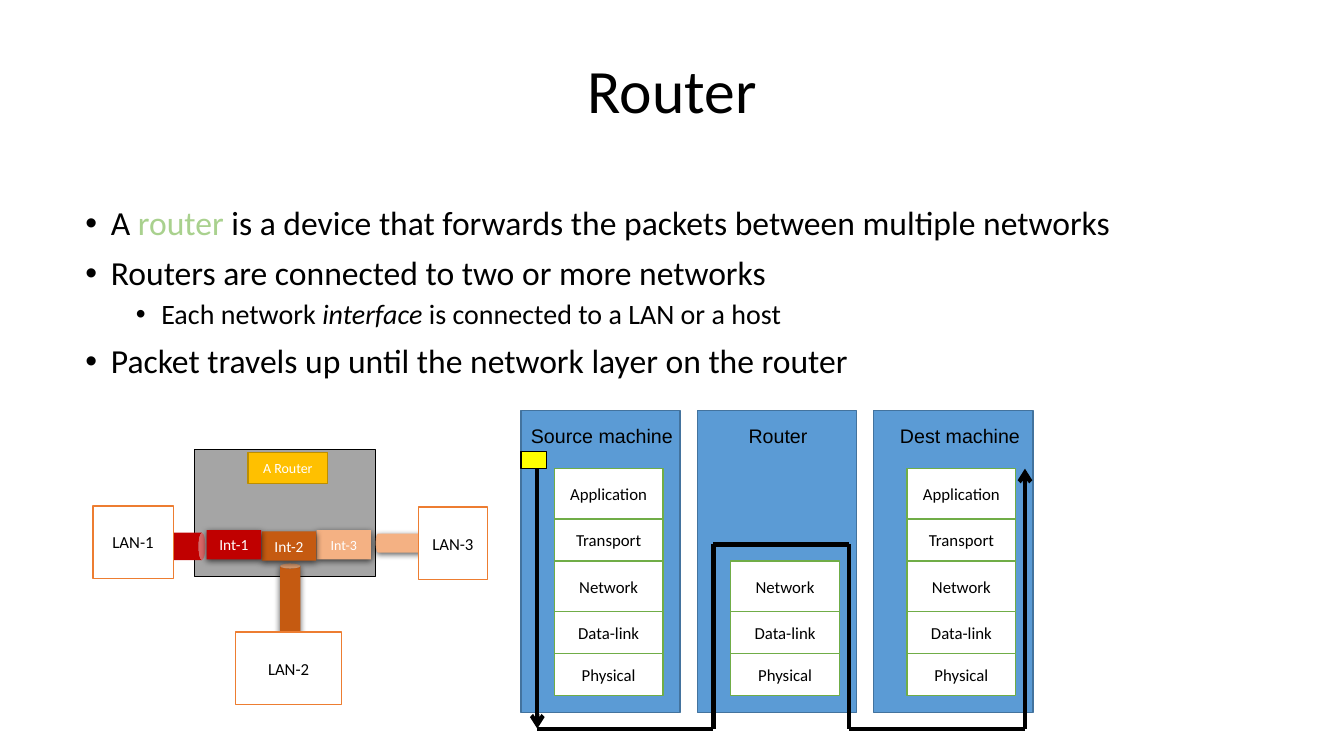
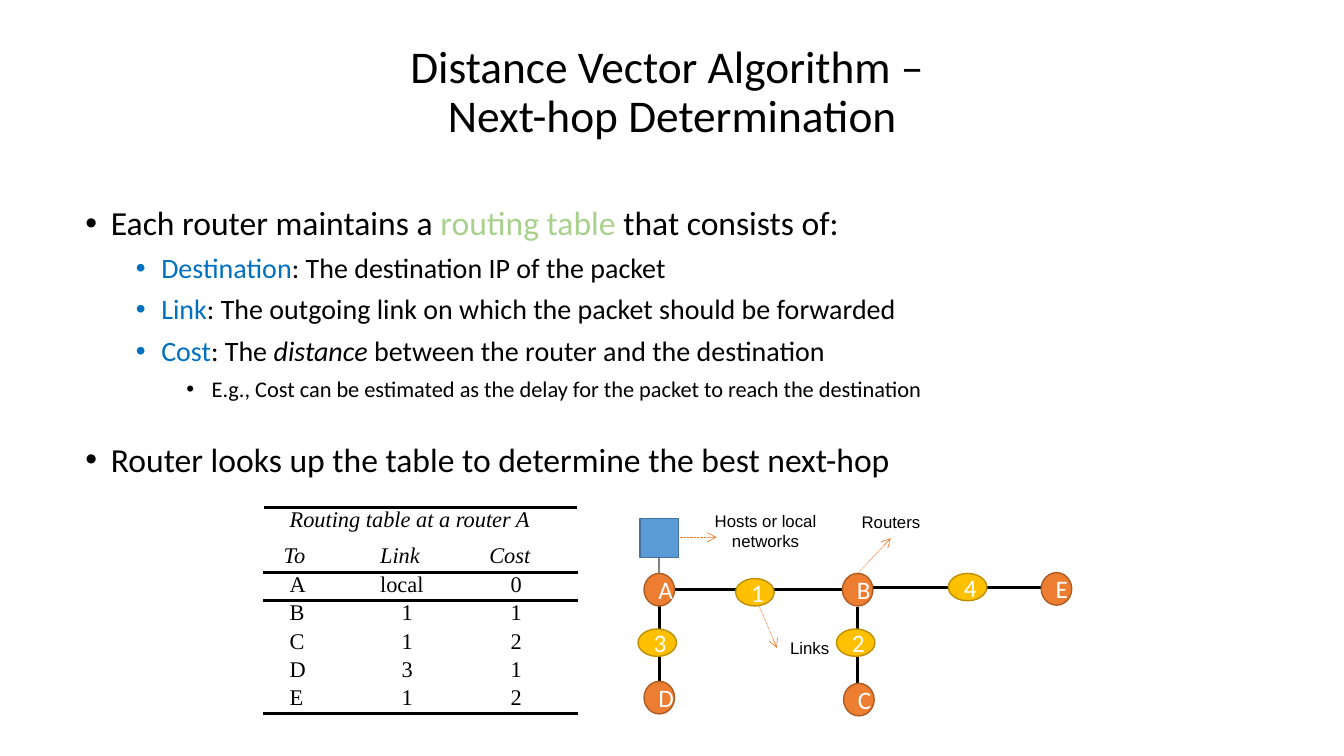
from itertools import pairwise

from lxml.etree import SubElement
from pptx import Presentation
from pptx.dml.color import RGBColor
from pptx.enum.dml import MSO_LINE
from pptx.enum.shapes import MSO_CONNECTOR, MSO_SHAPE
from pptx.enum.text import MSO_ANCHOR, MSO_AUTO_SIZE, PP_ALIGN
from pptx.oxml import parse_xml
from pptx.oxml.ns import nsdecls, qn
from pptx.util import Cm, Pt

COLORS = {
    "black": "000000", "white": "FFFFFF", "gray": "A5A5A5", "midgray": "808080",
    "blue": "5B9BD5", "blue_edge": "43739E", "link": "0070C0",
    "green": "70AD47", "pale_green": "A9D18E", "yellow": "FFFF00",
    "gold": "FFC000", "gold_edge": "BD8E00", "orange": "ED7D31",
    "orange_edge": "AF5C24", "rust": "C55A11", "red": "C00000", "peach": "F4B183",
}
RGB = {name: RGBColor.from_string(value) for name, value in COLORS.items()}
LEVEL_SIZES = [24, 20, 16]


def write(p, text, size=12, color="black", font="Calibri", italic=False, align=None):
    r = p.add_run()
    r.text = text
    r.font.size, r.font.name, r.font.italic = Pt(size), font, italic
    r.font.color.rgb = RGB[color]
    if align is not None:
        p.alignment = align


def add_box(s, kind, x, y, w, h, fill=None, line=None, text="", shadow=False,
            align=PP_ALIGN.CENTER, **fmt):
    """Add a preset shape, or a text box when kind is None."""
    pos = Cm(x), Cm(y), Cm(w), Cm(h)
    if kind is None:
        sp = s.shapes.add_textbox(*pos)
    else:
        sp = s.shapes.add_shape(kind, *pos)
        sp.shadow.inherit = False
        sp.fill.solid()
        sp.fill.fore_color.rgb = RGB[fill]
        if line:
            sp.line.color.rgb = RGB[line]
            sp.line.width = Pt(1)
        else:
            sp.line.fill.background()
        sp.text_frame.vertical_anchor = MSO_ANCHOR.MIDDLE
    if shadow:
        effects = sp._element.spPr.find(qn("a:effectLst"))
        effects.append(parse_xml(
            f'<a:outerShdw {nsdecls("a")} blurRad="57150" dist="19050" dir="5400000" '
            f'algn="ctr" rotWithShape="0"><a:srgbClr val="{COLORS["black"]}">'
            '<a:alpha val="63000"/></a:srgbClr></a:outerShdw>'))
    sp.text_frame.word_wrap = True
    if text:
        write(sp.text_frame.paragraphs[0], text, align=align, **fmt)
    return sp


prs = Presentation()
prs.slide_width, prs.slide_height = Cm(33.87), Cm(19.05)

# Titles and bullets: (level, space before, runs)
CONTENT = [
    ("Router", 44, [
        (0, 0, [("A ", {}), ("router", {"color": "pale_green"}),
                (" is a device that forwards the packets between multiple networks", {})]),
        (0, 10, [("Routers are connected to two or more networks", {})]),
        (1, 5, [("Each network ", {}), ("interface ", {"italic": True}),
                ("is connected to a LAN or a host", {})]),
        (0, 10, [("Packet travels up until the network layer on the router", {})]),
    ]),
    ("Distance Vector Algorithm – \nNext-hop Determination", 32.4, [
        (0, 0, [("Each router maintains a ", {}),
                ("routing table", {"color": "pale_green"}), (" that consists of:", {})]),
        (1, 8, [("Destination", {"color": "link"}),
                (": The destination IP of the packet", {})]),
        (1, 8, [("Link", {"color": "link"}),
                (": The outgoing link on which the packet should be forwarded", {})]),
        (1, 8, [("Cost", {"color": "link"}), (": The ", {}),
                ("distance", {"italic": True}),
                (" between the router and the destination", {})]),
        (2, 8, [("E.g., Cost can be estimated as the delay for the packet "
                 "to reach the destination", {})]),
        (0, 29, [("Router looks up the table to determine the best next-hop", {})]),
    ]),
]
slides = []
for title, title_size, bullets in CONTENT:
    s = prs.slides.add_slide(prs.slide_layouts[1])
    slides.append(s)
    head, body = s.shapes.title, s.placeholders[1]
    head.left, head.top, head.width, head.height = Cm(5.51), Cm(0.89), Cm(22.86), Cm(2.92)
    body.left, body.top, body.width, body.height = Cm(1.9), Cm(5.08), Cm(29.21), Cm(12.09)
    for sp in (head, body):
        sp.text_frame.auto_size = MSO_AUTO_SIZE.NONE
    head.text_frame.vertical_anchor = MSO_ANCHOR.MIDDLE
    p = head.text_frame.paragraphs[0]
    p.line_spacing = 0.9
    for i, part in enumerate(title.split("\n")):
        if i:
            p.add_line_break()
        write(p, part, size=title_size, align=PP_ALIGN.CENTER)

    tf = body.text_frame
    for i, (level, before, runs) in enumerate(bullets):
        p = tf.add_paragraph() if i else tf.paragraphs[0]
        p.level = level
        pPr = p._p.get_or_add_pPr()
        pPr.set("marL", str(Cm(0.64 + 1.27 * level)))
        pPr.set("indent", str(-Cm(0.64)))
        bullet_color = COLORS[runs[0][1].get("color", "black")]
        SubElement(SubElement(pPr, qn("a:buClr")), qn("a:srgbClr")).set("val", bullet_color)
        SubElement(pPr, qn("a:buFont")).set("typeface", "Arial")
        SubElement(pPr, qn("a:buChar")).set("char", "•")
        p.line_spacing = 0.9
        p.space_before = Pt(before)
        for text, fmt in runs:
            write(p, text, size=LEVEL_SIZES[level], **fmt)
router, vector = slides
RECT, OVAL, CAN = MSO_SHAPE.RECTANGLE, MSO_SHAPE.OVAL, MSO_SHAPE.CAN

# Router with its cables, LANs and interfaces
add_box(router, RECT, 4.9, 11.33, 4.57, 3.2, "gray", "black")
for x, y, w, h, color, angle, shadow in [
    (7.06, 14.2, 0.51, 2.62, "rust", 0, True),
    (3.94, 12.88, 0.69, 1.78, "red", 90, False),
    (10.29, 12.62, 0.48, 2.13, "peach", 90, True),
]:
    add_box(router, CAN, x, y, w, h, color, shadow=shadow).rotation = angle
for text, x, y, w in [("LAN-1", 2.34, 12.75, 2.03), ("LAN-2", 5.94, 15.93, 2.67),
                      ("LAN-3", 10.54, 12.78, 1.75)]:
    add_box(router, RECT, x, y, w, 1.83, "white", "orange", text)
for text, x, y, color, size in [("Int-3", 7.98, 13.36, "peach", 10),
                                ("Int-2", 6.6, 13.39, "rust", 11),
                                ("Int-1", 5.21, 13.36, "red", 11)]:
    add_box(router, RECT, x, y, 1.37, 0.74, color, text=text, shadow=True,
            size=size, color="white")
add_box(router, RECT, 6.25, 11.4, 2.01, 0.79, "gold", "gold_edge", "A Router",
        size=10, color="white")

# Protocol stacks of the three machines
LAYERS = [("Application", 1.27), ("Transport", 1.06), ("Network", 1.27),
          ("Data-link", 1.06), ("Physical", 1.06)]
MACHINES = [("Source machine", 0, 4.24, 0), ("Router", 1.04, 2.34, 2),
            ("Dest machine", 0.41, 3.61, 0)]
for i, (name, label_dx, label_w, first_layer) in enumerate(MACHINES):
    x, y = 13.13 + 4.445 * i, 11.81
    add_box(router, RECT, x, 10.34, 4.01, 7.62, "blue", "blue_edge")
    add_box(router, None, x + label_dx, 10.57, label_w, 0.86, text=name,
            align=PP_ALIGN.LEFT, size=14, font="Arial")
    for j, (layer, h) in enumerate(LAYERS):
        if j >= first_layer:
            add_box(router, RECT, x + 0.84, y, 2.74, h, "white", "green", layer)
        y += h
add_box(router, RECT, 13.13, 11.38, 0.64, 0.43, "yellow", "black")

# Lines: slide, ends, colour, width, arrow, dotted
ROUTE = [(13.54, 11.81), (13.54, 18.36), (17.98, 18.36), (17.98, 13.72),
         (21.39, 13.72), (21.39, 18.36), (25.83, 18.36), (25.83, 11.81)]
lines = [(router, *a, *b, "black", 3, i in (0, 6), False)
         for i, (a, b) in enumerate(pairwise(ROUTE))]
lines += [(vector, *ends, "black", 2.25, False, False) for ends in [
    (16.99, 14.86, 21.23, 14.86), (16.61, 17.17, 16.61, 15.27),
    (21.62, 17.22, 21.62, 15.29), (22, 14.81, 26.24, 14.81)]]
lines += [(vector, 16.61, 14.45, 16.61, 14.05, "midgray", 1.5, False, False)]
lines += [(vector, *ends, "orange", 0.5, True, True) for ends in [
    (19.13, 15.27, 19.58, 16.33), (21.62, 14.45, 22.45, 13.56),
    (17.09, 13.54, 18.06, 13.54)]]
for s, x1, y1, x2, y2, color, width, arrow, dotted in lines:
    c = s.shapes.add_connector(MSO_CONNECTOR.STRAIGHT, Cm(x1), Cm(y1), Cm(x2), Cm(y2))
    c.line.color.rgb = RGB[color]
    c.line.width = Pt(width)
    if dotted:
        c.line.dash_style = MSO_LINE.ROUND_DOT
    if arrow:
        SubElement(c.line._get_or_add_ln(), qn("a:tailEnd")).set("type", "arrow")
    SubElement(c._element.spPr, qn("a:effectLst"))

# Network of routers, links and a host
add_box(vector, RECT, 16.13, 13.06, 0.97, 0.99, "blue", "blue_edge")
for text, x, y in [("A", 16.23, 14.45), ("B", 21.23, 14.45), ("C", 21.26, 17.22),
                   ("D", 16.23, 17.17), ("E", 26.24, 14.43)]:
    add_box(vector, OVAL, x, y, 0.77, 0.82, "orange", "orange_edge", text,
            size=18, color="white")
for text, x, y in [("1", 18.54, 14.58), ("2", 21.08, 15.85), ("3", 16.08, 15.85),
                   ("4", 23.9, 14.45)]:
    add_box(vector, OVAL, x, y, 0.97, 0.69, "gold", "gold_edge", text,
            size=18, color="white")
for text, x, y, w, h in [("Links", 19.58, 15.95, 1.65, 0.76),
                         ("Routers", 21.39, 12.78, 2.13, 0.76),
                         ("Hosts or local networks", 17.63, 12.75, 3.33, 1.3)]:
    add_box(vector, None, x, y, w, h, text=text, font="Arial")

# Routing table
ROWS = [("Routing table at a router A", "", ""), ("To", "Link", "Cost"),
        ("A", "local", "0"), ("B", "1", "1"), ("C", "1", "2"),
        ("D", "3", "1"), ("E", "1", "2")]
HEIGHTS = [0.91, 0.74] + [0.71] * 5
RULES = {0: "a:lnT", 1: "a:lnB", 2: "a:lnT", 6: "a:lnB"}
table = vector.shapes.add_table(7, 3, Cm(6.65), Cm(12.78), Cm(7.9), Cm(5.2)).table
table.first_row = table.horz_banding = False
for col, width in zip(table.columns, (2.43, 2.75, 2.72)):
    col.width = Cm(width)
for i, (row, height) in enumerate(zip(ROWS, HEIGHTS)):
    table.rows[i].height = Cm(height)
    for j, text in enumerate(row):
        cell = table.cell(i, j)
        indent = 1.04 if text.isdigit() else 0.5 if i == 1 or j else 0.65
        cell.margin_left = Cm(indent)
        cell.margin_right = cell.margin_top = cell.margin_bottom = 0
        if i in RULES:
            cell._tc.get_or_add_tcPr().insert(0, parse_xml(
                f'<{RULES[i]} {nsdecls("a")} w="28575"><a:solidFill>'
                f'<a:srgbClr val="{COLORS["black"]}"/></a:solidFill></{RULES[i]}>'))
        cell.fill.background()
        if text:
            write(cell.text_frame.paragraphs[0], text, size=16,
                  font="Times New Roman", italic=i < 2)
table.cell(0, 0).merge(table.cell(0, 2))

prs.save("out.pptx")
